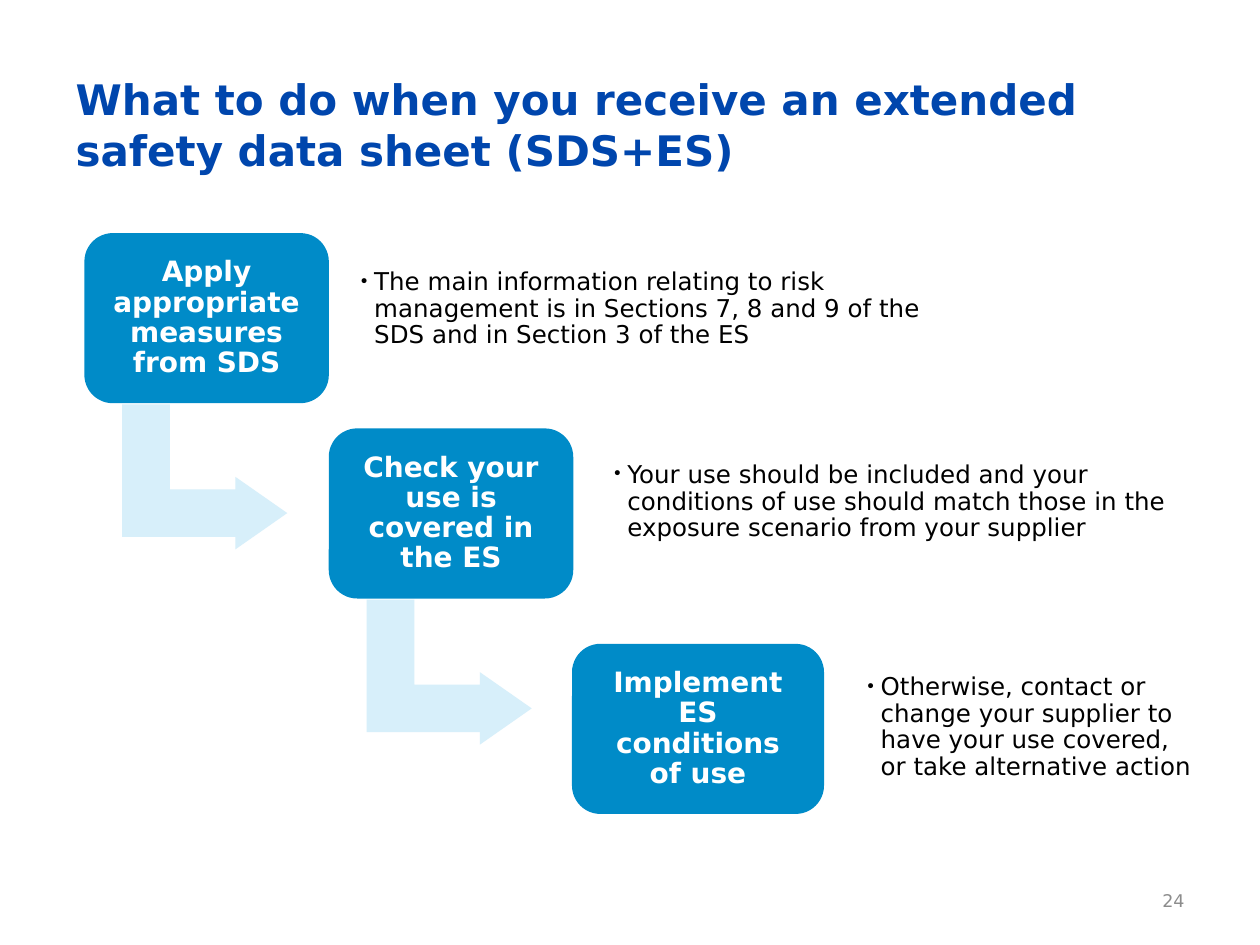
import dataclasses

import pptx
import pptx.dml.color
import pptx.enum.shapes
import pptx.enum.text
import pptx.oxml
import pptx.oxml.ns
import pptx.util

EMU_PER_PX = 9144  # 100 px to the inch
FONT = "DejaVu Sans"
BLUE, PALE_BLUE, TITLE_BLUE = "008BC8", "D7EFFA", "0046AD"
WHITE, BLACK, GREY = "FFFFFF", "000000", "8C8C8C"
STEP_HEIGHT = 135
ARROW_WIDTH, ARROW_HEIGHT = 115, 131
ARROW_DX, ARROW_DY = 30, 128
ARROW_ADJUSTMENTS = (0.328, 0.25, 0.358)


@dataclasses.dataclass(frozen=True)
class Area:
    left: int
    top: int
    width: int
    height: int

    def emu(self) -> list[int]:
        return [px(length) for length in dataclasses.astuple(self)]


@dataclasses.dataclass(frozen=True)
class Step:
    heading: str
    box: Area
    detail: str
    detail_area: Area


STEPS = [
    Step("Apply appropriate measures from SDS", Area(67, 185, 194, STEP_HEIGHT),
         "The main information relating to risk management is in Sections 7, 8 and 9 "
         "of the SDS and in Section 3 of the ES", Area(279, 191, 467, 109)),
    Step("Check your use is covered in the ES", Area(261, 340, 194, STEP_HEIGHT),
         "Your use should be included and your conditions of use should match those "
         "in the exposure scenario from your supplier", Area(480, 344, 461, 109)),
    Step("Implement ES conditions of use", Area(454, 511, 200, STEP_HEIGHT),
         "Otherwise, contact or change your supplier to have your use covered, "
         "or take alternative action", Area(681, 489, 276, 177)),
]


def px(length: int) -> int:
    return pptx.util.Emu(length * EMU_PER_PX)


def color(value: str) -> pptx.dml.color.RGBColor:
    return pptx.dml.color.RGBColor.from_string(value)


def place(shape, area: Area) -> None:
    shape.left, shape.top, shape.width, shape.height = area.emu()


def write(shape, text: str, size: int, ink: str, bold: bool = False,
          align=pptx.enum.text.PP_ALIGN.LEFT, inset: int | None = None,
          line_spacing: float = 1.0):
    """Fill the shape with one vertically centred paragraph and return it."""
    frame = shape.text_frame
    frame.text = text
    frame.word_wrap = True
    frame.auto_size = pptx.enum.text.MSO_AUTO_SIZE.NONE
    frame.vertical_anchor = pptx.enum.text.MSO_ANCHOR.MIDDLE
    if inset is not None:
        frame.margin_left = frame.margin_right = px(inset)
        frame.margin_top = frame.margin_bottom = px(inset)
    para = frame.paragraphs[0]
    para.alignment = align
    para.line_spacing = line_spacing
    para.space_before = para.space_after = pptx.util.Pt(0)
    font = para.runs[0].font
    font.name, font.size, font.bold = FONT, pptx.util.Pt(size), bold
    font.color.rgb = color(ink)
    return para


def add_bullet(para, indent: int, percent: int) -> None:
    properties = para._p.get_or_add_pPr()
    properties.set("marL", str(px(indent)))
    properties.set("indent", str(-px(indent)))
    for tag, name, value in (("buSzPct", "val", str(percent * 1000)),
                             ("buFont", "typeface", FONT),
                             ("buChar", "char", "•")):
        bullet_part = pptx.oxml.parse_xml(f"<a:{tag} {pptx.oxml.ns.nsdecls('a')}/>")
        bullet_part.set(name, value)
        properties.append(bullet_part)


def add_filled_shape(slide, kind, area: Area, fill: str):
    shape = slide.shapes.add_shape(kind, *area.emu())
    shape.shadow.inherit = False
    shape.fill.solid()
    shape.fill.fore_color.rgb = color(fill)
    shape.line.fill.background()
    return shape


def add_arrow(slide, box: Area) -> None:
    """Draw the bent arrow that leads down and right from a step."""
    shift = (ARROW_HEIGHT - ARROW_WIDTH) // 2
    area = Area(box.left + ARROW_DX + shift, box.top + ARROW_DY,
                ARROW_WIDTH, ARROW_HEIGHT)
    arrow = add_filled_shape(slide, pptx.enum.shapes.MSO_SHAPE.BENT_UP_ARROW,
                             area, PALE_BLUE)
    arrow.rotation = 90
    for index, value in enumerate(ARROW_ADJUSTMENTS):
        arrow.adjustments[index] = value


def add_step(slide, step: Step, detail) -> None:
    box = add_filled_shape(slide, pptx.enum.shapes.MSO_SHAPE.ROUNDED_RECTANGLE,
                           step.box, BLUE)
    write(box, step.heading, 16, WHITE, bold=True, inset=13, line_spacing=0.9,
          align=pptx.enum.text.PP_ALIGN.CENTER)
    place(detail, step.detail_area)
    para = write(detail, step.detail, 14, BLACK, inset=6, line_spacing=0.9)
    add_bullet(para, indent=12, percent=70)


def main() -> None:
    deck = pptx.Presentation()
    deck.slide_width, deck.slide_height = px(1000), px(750)
    comparison_layout = deck.slide_layouts[4]
    slide = deck.slides.add_slide(comparison_layout)
    title, *details, spare = slide.placeholders

    place(title, Area(50, 36, 900, 125))
    write(title, "What to do when you receive an extended safety data sheet (SDS+ES)",
          24, TITLE_BLUE, bold=True)
    spare.element.getparent().remove(spare.element)

    for step in STEPS[:-1]:
        add_arrow(slide, step.box)
    for step, detail in zip(STEPS, details):
        add_step(slide, step, detail)

    page_number = slide.shapes.add_textbox(*Area(717, 695, 233, 40).emu())
    write(page_number, "24", 10, GREY, align=pptx.enum.text.PP_ALIGN.RIGHT)
    deck.save("out.pptx")


if __name__ == "__main__":
    main()
